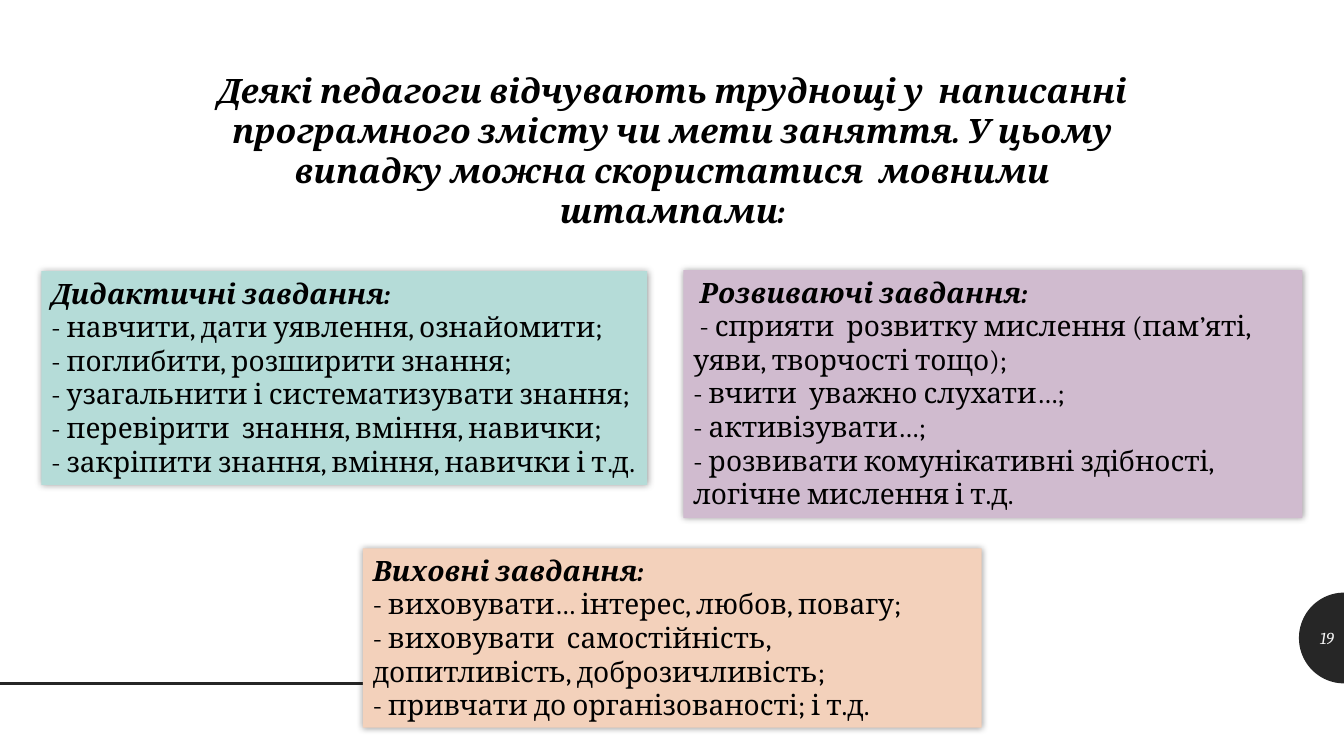
from dataclasses import dataclass
from math import cos, pi, sin

from lxml.etree import SubElement
from pptx import Presentation
from pptx.dml.color import RGBColor as Rgb
from pptx.enum.shapes import MSO_CONNECTOR as Conn, MSO_SHAPE as Shape
from pptx.enum.text import MSO_ANCHOR as Anchor, PP_ALIGN as Align
from pptx.oxml.ns import qn
from pptx.util import Inches, Pt


@dataclass(frozen=True)
class Theme:
    font: str = "Cambria"
    ink: str = "000000"
    dark: str = "262626"
    pale: str = "F5F5F5"
    mint: str = "B5DCD8"
    lilac: str = "D0BBCF"
    peach: str = "F3D1BB"
    title: int = 24
    body: int = 20
    note: int = 12
    rule: int = 2
    blur: int = 5


T = Theme()
WIDE, HIGH = Inches(13.333), Inches(7.5)

TITLE = ("Деякі педагоги відчувають труднощі у  написанні програмного змісту "
         "чи мети заняття. У цьому випадку можна скористатися  мовними штампами:")
# Boxes are left, top, width and height in percent of the slide
CARDS = [
    ((3.08, 35.87, 45.08, 28.27), T.mint, [
        "Дидактичні завдання:",
        "- навчити, дати уявлення, ознайомити;",
        "- поглибити, розширити знання;",
        "- узагальнити і систематизувати знання;",
        "- перевірити  знання, вміння, навички;",
        "- закріпити знання, вміння, навички і т.д."]),
    ((50.85, 35.73, 46.05, 32.8), T.lilac, [
        " Розвиваючі завдання:",
        " - сприяти  розвитку мислення (пам’яті,  уяви, творчості тощо);",
        "- вчити  уважно слухати…;",
        "- активізувати…;",
        "- розвивати комунікативні здібності, логічне мислення і т.д."]),
    ((27, 72.53, 46.05, 23.73), T.peach, [
        "Виховні завдання:",
        "- виховувати… інтерес, любов, повагу;",
        "- виховувати  самостійність, допитливість, доброзичливість;",
        "- привчати до організованості; і т.д."]),
]


def place(box):
    """Turn percent of the slide into lengths."""
    x, y, w, h = box
    return [round(part * side / 100)
            for part, side in ((x, WIDE), (y, HIGH), (w, WIDE), (h, HIGH))]


def write(par, text, size, color=T.ink, bold=False, slant=False, align=Align.LEFT):
    par.text, par.alignment = text, align
    font = par.font
    font.name, font.size = T.font, Pt(size)
    font.bold, font.italic = bold, slant
    font.color.rgb = Rgb.from_string(color)


def paint(shape, color):
    shape.shadow.inherit = False
    shape.fill.solid()
    shape.fill.fore_color.rgb = Rgb.from_string(color)
    shape.line.fill.background()


def glow(shape):
    """Add a soft shadow on every side."""
    effects = shape._element.spPr.find(qn("a:effectLst"))
    shade = SubElement(effects, qn("a:outerShdw"), blurRad=str(Pt(T.blur)),
                       dist="0", dir="0", algn="ctr", rotWithShape="0")
    tone = SubElement(shade, qn("a:srgbClr"), val=T.ink)
    SubElement(tone, qn("a:alpha"), val="40000")


def heading(slide, box):
    frame = slide.shapes.add_textbox(*place(box)).text_frame
    frame.word_wrap = True
    write(frame.paragraphs[0], TITLE, T.title, bold=True, slant=True, align=Align.CENTER)


def card(slide, box, color, lines):
    shape = slide.shapes.add_shape(Shape.RECTANGLE, *place(box))
    paint(shape, color)
    glow(shape)
    frame = shape.text_frame
    frame.word_wrap, frame.vertical_anchor = True, Anchor.TOP
    for i, line in enumerate(lines):
        par = frame.add_paragraph() if i else frame.paragraphs[0]
        write(par, line, T.body, bold=not i, slant=not i)


def rule(slide, box):
    x, y, w, h = place(box)
    line = slide.shapes.add_connector(Conn.STRAIGHT, x, y, x + w, y + h)
    line.line.color.rgb = Rgb.from_string(T.dark)
    line.line.width = Pt(T.rule)
    SubElement(line._element.spPr, qn("a:effectLst"))


def badge(slide, box, label):
    """Draw a half disc at the right edge with the page number."""
    x, y, w, h = place(box)
    steps = 48
    arc = [(x + w * (1 - sin(pi * i / steps)), y + h / 2 * (1 - cos(pi * i / steps)))
           for i in range(steps + 1)]
    pen = slide.shapes.build_freeform(*arc[0])
    pen.add_line_segments(arc[1:])
    paint(pen.convert_to_shape(), T.dark)
    frame = slide.shapes.add_textbox(
        x, round(y + h * 0.28), w, round(h * 0.44)).text_frame
    frame.word_wrap, frame.vertical_anchor = True, Anchor.MIDDLE
    write(frame.paragraphs[0], label, T.note, T.pale, slant=True, align=Align.RIGHT)


def main():
    deck = Presentation()
    deck.slide_width, deck.slide_height = WIDE, HIGH
    slide = deck.slides.add_slide(deck.slide_layouts[6])
    badge(slide, (96.65, 78.4, 3.35, 12), "19")
    rule(slide, (0, 90.4, 36.9, 0))
    heading(slide, (13.28, 8.53, 73.5, 22.93))
    for box, color, lines in CARDS:
        card(slide, box, color, lines)
    deck.save("out.pptx")


if __name__ == "__main__":
    main()
